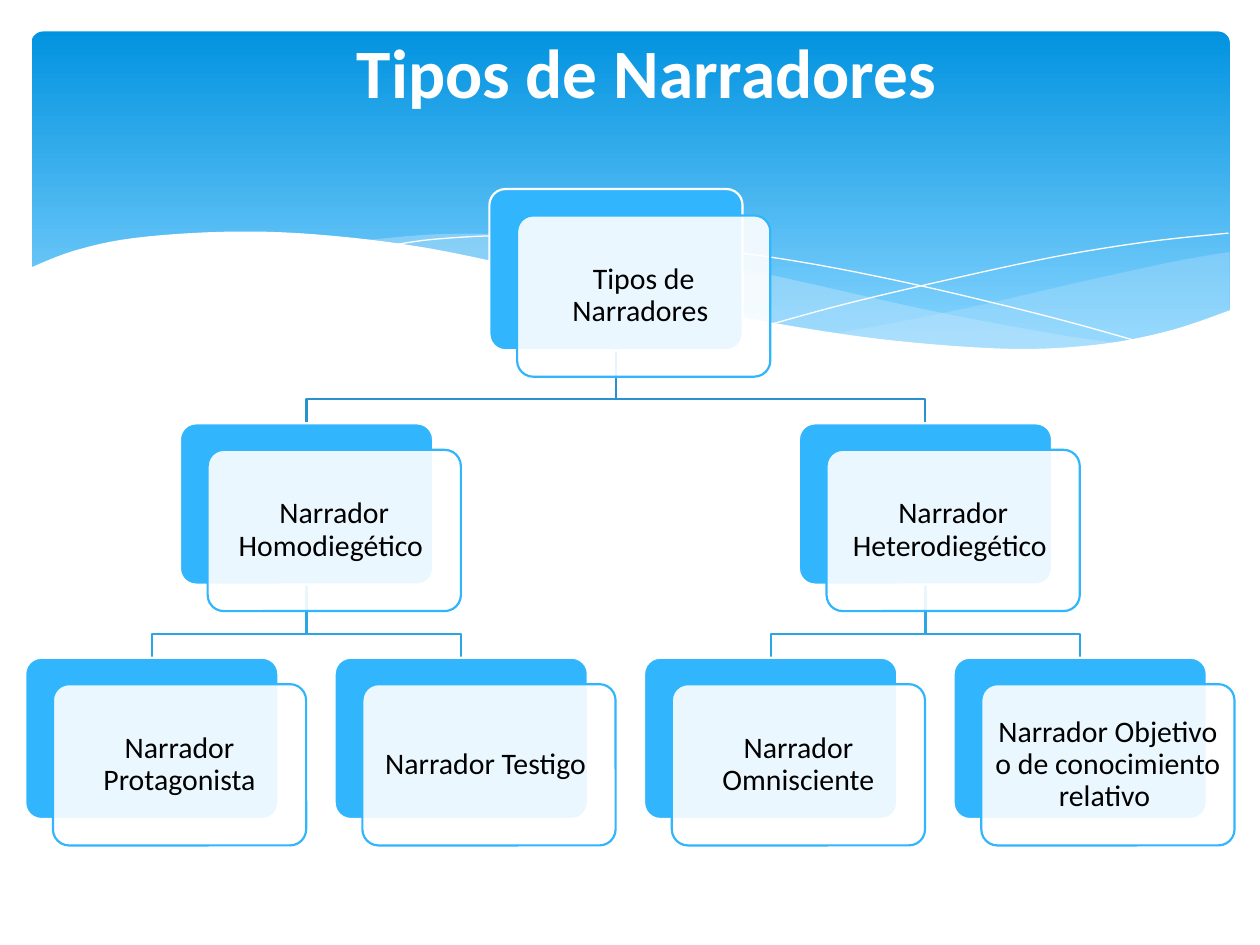
"""Builds a slide with a tree of narrator types under a wavy banner."""
import lxml.etree
import pptx
import pptx.dml.color
import pptx.enum.shapes
import pptx.enum.text
import pptx.oxml.ns
import pptx.util

Inch = pptx.util.Inches
Pt = pptx.util.Pt
RGB = pptx.dml.color.RGBColor
MID = pptx.enum.text.MSO_ANCHOR.MIDDLE
CENTER = pptx.enum.text.PP_ALIGN.CENTER

WHITE = RGB(0xFF, 0xFF, 0xFF)
BLACK = RGB(0, 0, 0)
BLUE = RGB(0x31, 0xB6, 0xFD)
DEEP = RGB(0x02, 0x93, 0xE0)
PALE = RGB(0x83, 0xD3, 0xFE)
MIST = RGB(0xC6, 0xE7, 0xFC)
LINKS = [RGB(0x27, 0x92, 0xCB), RGB(0x2C, 0xA5, 0xE6)]
FONT = "Calibri"

TITLE = "Tipos de Narradores "
NODES = [
    ("Tipos de Narradores ", 1.5, 0, None),
    ("Narrador Homodiegético ", 0.5, 1, 0),
    ("Narrador Protagonista", 0, 2, 1),
    ("Narrador Testigo ", 1, 2, 1),
    ("Narrador Heterodiegético ", 2.5, 1, 0),
    ("Narrador Omnisciente", 2, 2, 4),
    ("Narrador Objetivo o de conocimiento relativo ", 3, 2, 4),
]
LEFT, TOP = 0.2, 1.5
COL, ROW = 2.456, 1.86
WIDE, HIGH = 2.01, 1.28
SHIFT_X, SHIFT_Y = 0.22, 0.21
DROP = 0.39

SIDE = [
    [(9.76, 2), (9.35, 2.07), (8.61, 2.23), (7.79, 2.42), (7.06, 2.57), (6.61, 2.65)],
    [(6.61, 2.65), (7.05, 2.71), (7.57, 2.76), (8.14, 2.78), (8.72, 2.74),
     (9.28, 2.63), (9.76, 2.47)],
]
BAND = [
    [(8.93, 2.73), (8.37, 2.65), (7.41, 2.47), (6.29, 2.22), (5.41, 2.03),
     (4.65, 1.91), (3.99, 1.86), (3.44, 1.86), (2.86, 1.91)],
    [(2.86, 1.91), (3.42, 1.99), (4.04, 2.11), (4.91, 2.32), (5.84, 2.52),
     (6.65, 2.66), (7.36, 2.75), (8.07, 2.78), (8.57, 2.77), (8.93, 2.73)],
]
ARCS = [
    [(3.09, 1.95), (3.44, 1.9), (4.01, 1.87), (4.69, 1.89), (5.56, 1.97),
     (6.36, 2.08), (7.27, 2.26), (8.31, 2.51), (9.07, 2.72)],
    [(6.13, 2.57), (6.72, 2.41), (7.48, 2.23), (8.36, 2.04), (9.1, 1.92), (9.75, 1.85)],
]
CREST = [
    (0.23, 2.13), (0.59, 1.99), (1.06, 1.89), (1.77, 1.84), (2.5, 1.86),
    (3.4, 1.97), (4.47, 2.2), (5.55, 2.45), (6.48, 2.62), (7.26, 2.72),
    (8.09, 2.77), (8.75, 2.73), (9.3, 2.62), (9.77, 2.46),
]
BASE = [(9.77, 3.29), (0.23, 3.29)]


def bend(knots, steps=6):
    ends = [knots[0], *knots, knots[-1]]
    dots = []
    for a, b, c, d in zip(ends, ends[1:], ends[2:], ends[3:]):
        for step in range(steps):
            t = step / steps
            dots.append(tuple(
                q + t * (r - p) / 2 + t**2 * (2 * p - 5 * q + 4 * r - s) / 2
                + t**3 * (3 * q - p - 3 * r + s) / 2
                for p, q, r, s in zip(a, b, c, d)))
    return dots + [knots[-1]]


def paint(shape, fill=None, line=None, width=0, alpha=None):
    shape.shadow.inherit = False
    if fill is None:
        shape.fill.background()
    else:
        shape.fill.solid()
        shape.fill.fore_color.rgb = fill
    if alpha:
        tint = shape.fill._xPr.find(".//" + pptx.oxml.ns.qn("a:srgbClr"))
        lxml.etree.SubElement(tint, pptx.oxml.ns.qn("a:alpha"), val=str(alpha * 1000))
    if line is None:
        shape.line.fill.background()
    else:
        shape.line.color.rgb = line
        shape.line.width = Pt(width)


def trace(slide, dots, close=False, **look):
    dots = [(Inch(x), Inch(y)) for x, y in dots]
    pen = slide.shapes.build_freeform(*dots[0], scale=1.0)
    pen.add_line_segments(dots[1:], close=close)
    paint(pen.convert_to_shape(), **look)


def card(slide, x, y, w, h, curve):
    kind = pptx.enum.shapes.MSO_SHAPE.ROUNDED_RECTANGLE
    shape = slide.shapes.add_shape(kind, Inch(x), Inch(y), Inch(w), Inch(h))
    shape.adjustments[0] = curve
    return shape


def write(shape, text, size, color, bold=False, pads=(0.07,) * 4):
    frame = shape.text_frame
    frame.word_wrap = True
    frame.vertical_anchor = MID
    frame.margin_left, frame.margin_top, frame.margin_right, frame.margin_bottom = map(Inch, pads)
    para = frame.paragraphs[0]
    para.alignment = CENTER
    run = para.add_run()
    run.text = text
    run.font.name = FONT
    run.font.size = Pt(size)
    run.font.bold = bold
    run.font.color.rgb = color
    return para


def banner(slide):
    shape = card(slide, 0.25, 0.25, 9.51, 2.7, 0.034)
    paint(shape)
    shape.fill.gradient()
    shape.fill.gradient_angle = 270
    for stop, color, place in zip(shape.fill.gradient_stops, (DEEP, PALE), (0, 0.9)):
        stop.color.rgb = color
        stop.position = place
    for edges, alpha in ((SIDE, 29), (BAND, 40)):
        dots = [dot for edge in edges for dot in bend(edge)]
        trace(slide, dots, close=True, fill=MIST, alpha=alpha)
    for arc in ARCS:
        trace(slide, bend(arc), line=WHITE)
    trace(slide, bend(CREST) + BASE, close=True, fill=WHITE)


def spot(node):
    return LEFT + node[1] * COL, TOP + node[2] * ROW


def tree(slide):
    for node in reversed(NODES):
        if node[3] is None:
            continue
        boss = NODES[node[3]]
        (x, y), (end, foot) = spot(boss), spot(node)
        x, y, end = x + WIDE / 2, y + HIGH, end + WIDE / 2
        path_dots = [(x, y), (x, y + DROP), (end, y + DROP), (end, foot)]
        trace(slide, path_dots, line=LINKS[boss[2]], width=1.25)
    for node in NODES:
        x, y = spot(node)
        paint(card(slide, x, y, WIDE, HIGH, 0.1), BLUE, WHITE, 1.25)
        front = card(slide, x + SHIFT_X, y + SHIFT_Y, WIDE, HIGH, 0.1)
        paint(front, WHITE, BLUE, 1.25, 90)
        write(front, node[0], 17, BLACK).line_spacing = 0.9


def main():
    deck = pptx.Presentation()
    deck.slide_width, deck.slide_height = Inch(10), Inch(7.5)
    slide = deck.slides.add_slide(deck.slide_layouts[6])
    banner(slide)
    tree(slide)
    head = slide.shapes.add_textbox(Inch(0.98), Inch(0.13), Inch(8.43), Inch(0.79))
    write(head, TITLE, 39.6, WHITE, True, (0.1, 0.1, 0.1, 0.02))
    deck.save("out.pptx")


if __name__ == "__main__":
    main()
